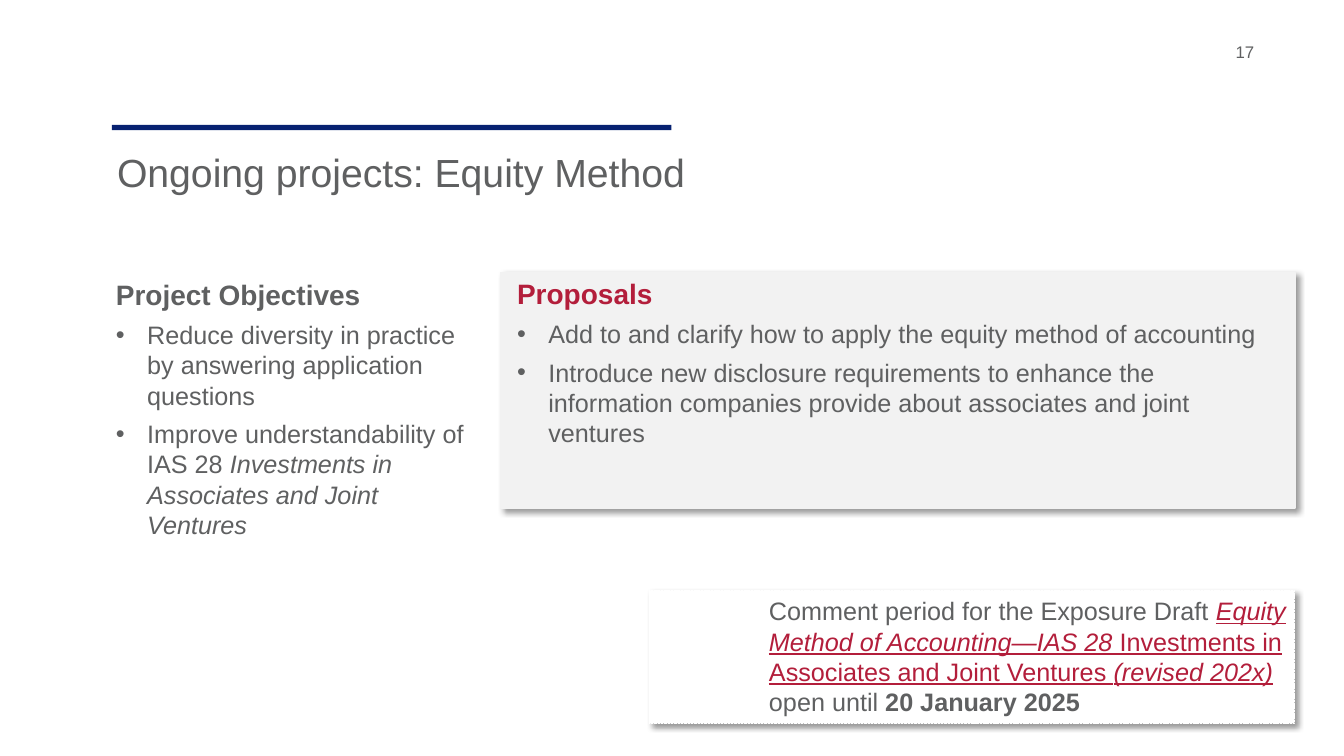
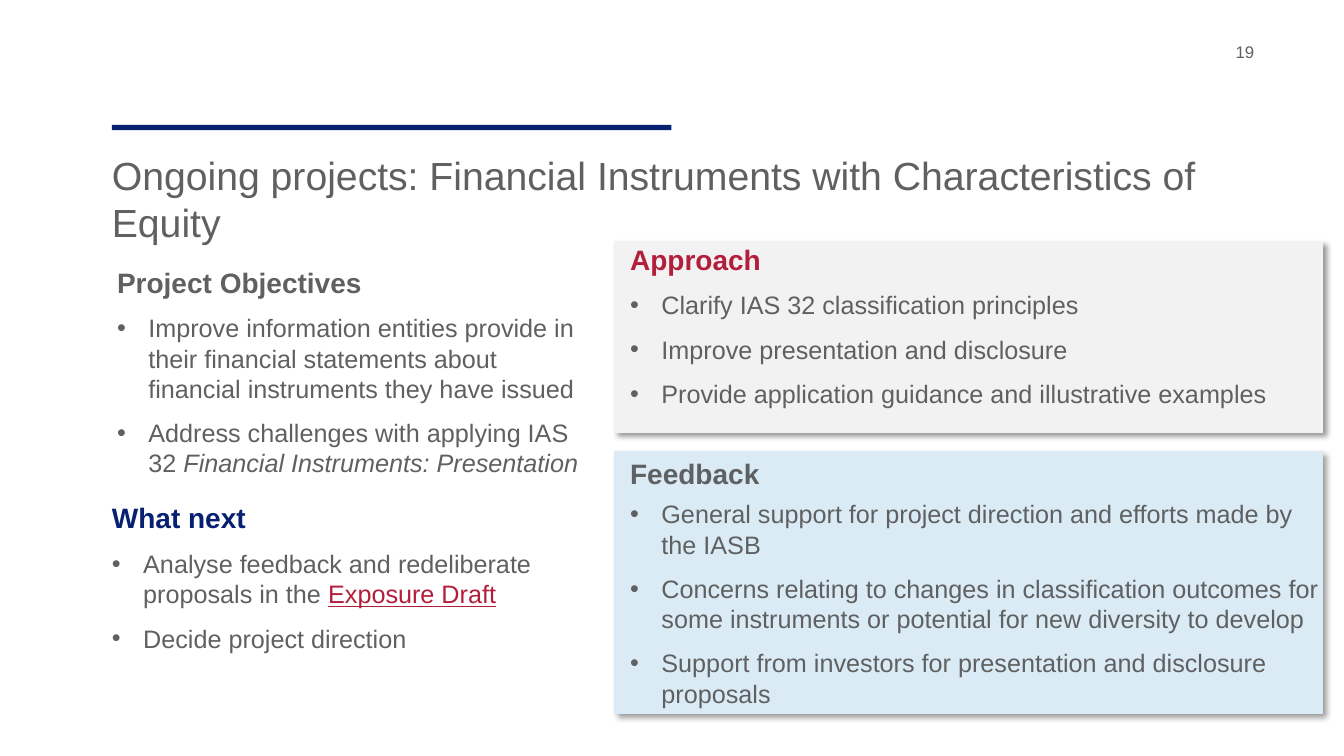
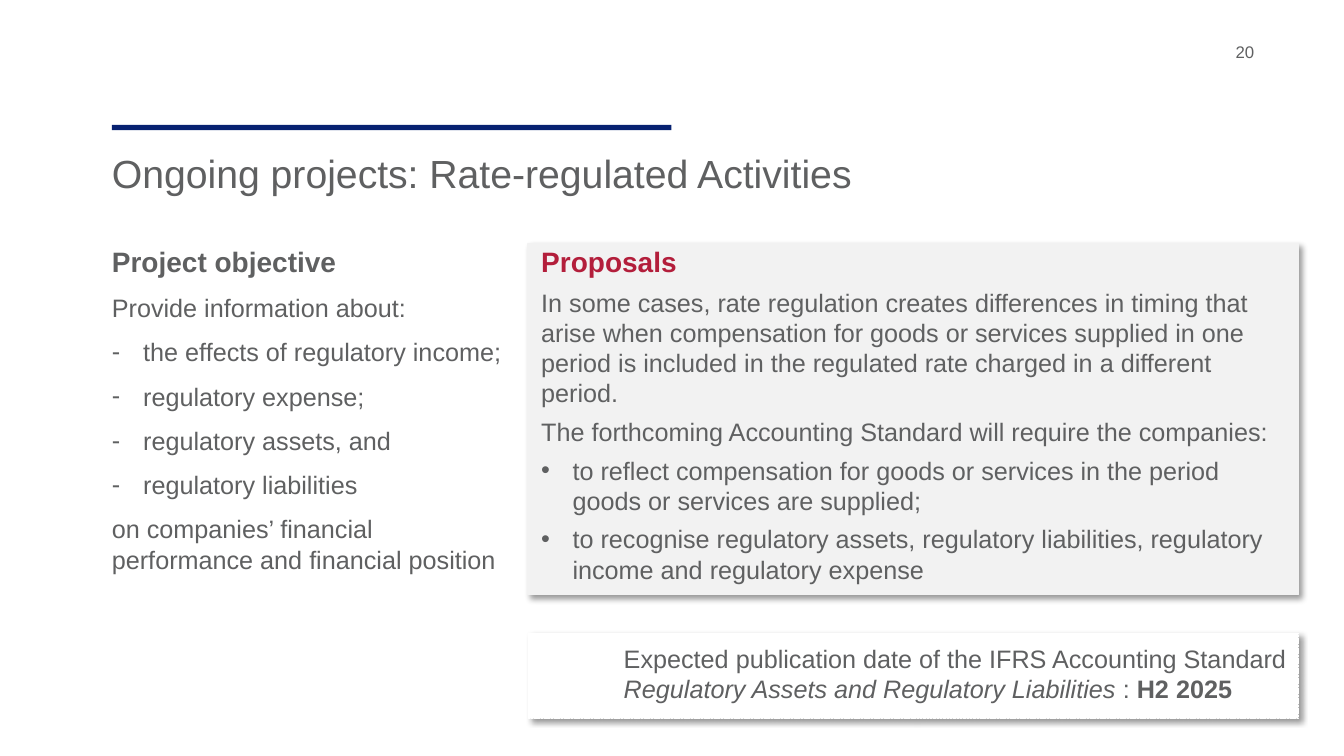
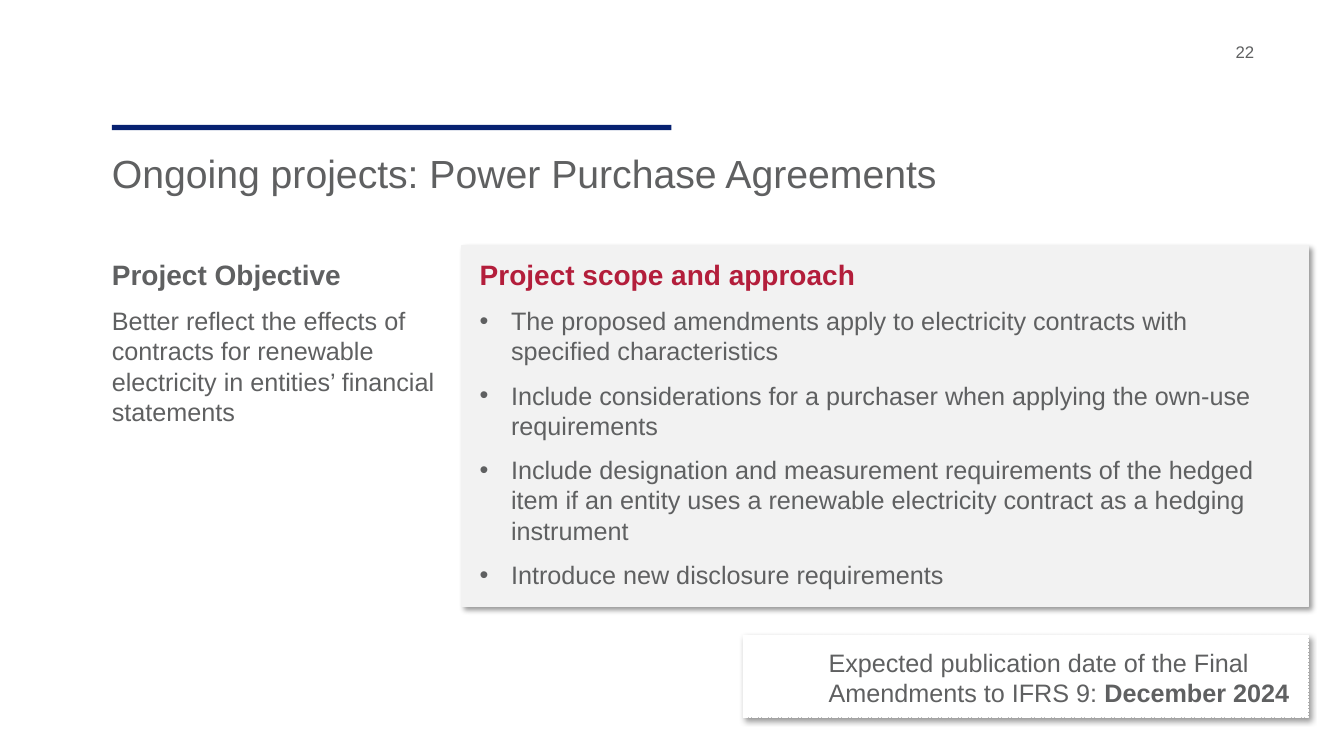
from lxml.etree import SubElement
from pptx import Presentation
from pptx.dml.color import RGBColor
from pptx.enum.dml import MSO_LINE
from pptx.enum.shapes import MSO_SHAPE
from pptx.oxml.ns import qn
from pptx.util import Cm, Pt

COLORS = {
    "bar": "072171",
    "navy": "072071",
    "text": "5F6061",
    "red": "B31E3B",
    "grey": "F2F2F2",
    "blue": "DAEBF5",
    "white": "FFFFFF",
}
FONT = "Arial"
INDENT = Cm(0.79)


def add_panel(slide, box, color):
    panel = slide.shapes.add_shape(MSO_SHAPE.RECTANGLE, *map(Cm, box))
    panel.shadow.inherit = False
    panel.fill.solid()
    panel.fill.fore_color.rgb = RGBColor.from_string(COLORS[color])
    panel.line.color.rgb = RGBColor.from_string(COLORS[color])
    panel.line.width = Pt(1)
    if color == "bar":
        panel.line.fill.background()
        return
    if color == "white":
        panel.line.width = Pt(0.25)
        panel.line.dash_style = MSO_LINE.SQUARE_DOT
    effects = panel._element.spPr.find(qn("a:effectLst"))
    shadow = SubElement(effects, qn("a:outerShdw"), blurRad=str(Pt(4)), dist=str(Pt(3)),
                        dir="2700000", algn="tl", rotWithShape="0")
    black = SubElement(shadow, qn("a:srgbClr"), val="000000")
    SubElement(black, qn("a:alpha"), val="40000")


def add_text(slide, box, paragraphs, size=18, heading=None, heading_color="text", gaps=(10, 10)):
    frame = slide.shapes.add_textbox(*map(Cm, box)).text_frame
    frame.word_wrap = True
    frame.margin_left = frame.margin_right = frame.margin_top = frame.margin_bottom = 0
    rows = [("", (heading, "h"))] if heading else []
    rows += paragraphs
    for index, (bullet, *runs) in enumerate(rows):
        paragraph = frame.paragraphs[0] if index == 0 else frame.add_paragraph()
        if index:
            paragraph.space_before = Pt(gaps[0] if index == 1 else gaps[1])
        if bullet:
            properties = paragraph._p.get_or_add_pPr()
            properties.set("marL", str(INDENT))
            properties.set("indent", str(-INDENT))
            SubElement(properties, qn("a:buFont"), typeface=FONT)
            SubElement(properties, qn("a:buChar"), char=bullet)
        for words, style in runs:
            run = paragraph.add_run()
            run.text = words
            run.font.name = FONT
            run.font.size = Pt(20 if style == "h" else size)
            run.font.bold = style in ("h", "b")
            run.font.italic = "i" in style
            run.font.underline = "u" in style
            color = heading_color if style == "h" else "red" if "u" in style else "text"
            run.font.color.rgb = RGBColor.from_string(COLORS[color])


pages = [
    {
        "number": "17",
        "title": "Ongoing projects: Equity Method",
        "title_box": (2.95, 3.73, 28.3, 1.83),
        "panels": [((12.62, 6.86, 20.02, 5.94), "grey"), ((16.36, 14.88, 16.26, 3.35), "white")],
        "blocks": [
            {"box": (2.92, 6.99, 9.27, 5.1), "heading": "Project Objectives", "gaps": (6, 6),
             "paragraphs": [
                 ("•", ("Reduce diversity in practice by answering application questions", "")),
                 ("•", ("Improve understandability of IAS 28 ", ""),
                  ("Investments in Associates and Joint Ventures", "i")),
             ]},
            {"box": (13.03, 6.96, 18.92, 4.98), "heading": "Proposals", "heading_color": "red",
             "gaps": (6, 6),
             "paragraphs": [
                 ("•", ("Add to and clarify how to apply the equity method of accounting", "")),
                 ("•", ("Introduce new disclosure requirements to enhance the information companies "
                        "provide about associates and joint ventures", "")),
             ]},
            {"box": (19.38, 15.01, 13.26, 2.69),
             "paragraphs": [
                 ("", ("Comment period for the Exposure Draft ", ""),
                  ("Equity Method of Accounting—IAS 28 ", "iu"),
                  ("Investments in Associates and Joint Ventures ", "u"),
                  ("(revised 202x) ", "iu"),
                  ("open until ", ""),
                  ("20 January 2025", "b")),
             ]},
        ],
    },
    {
        "number": "19",
        "title": "Ongoing projects: Financial Instruments with Characteristics of Equity",
        "title_box": (2.82, 3.81, 28.3, 1.83),
        "panels": [((15.49, 11.38, 17.83, 6.6), "blue"), ((15.49, 6.1, 17.83, 4.8), "grey")],
        "blocks": [
            {"box": (2.95, 6.68, 11.96, 5.7), "heading": "Project Objectives",
             "paragraphs": [
                 ("•", ("Improve information entities provide in their financial statements about "
                        "financial instruments they have issued", "")),
                 ("•", ("Address challenges with applying IAS 32 ", ""),
                  ("Financial Instruments: Presentation", "i")),
             ]},
            {"box": (2.82, 12.62, 11.96, 4.22), "heading": "What next", "heading_color": "navy",
             "paragraphs": [
                 ("•", ("Analyse feedback and redeliberate proposals in the ", ""),
                  ("Exposure Draft", "u")),
                 ("•", ("Decide project direction", "")),
             ]},
            {"box": (15.88, 6.1, 16.15, 4.8), "heading": "Approach", "heading_color": "red",
             "paragraphs": [
                 ("•", ("Clarify IAS 32 classification principles", "")),
                 ("•", ("Improve presentation and disclosure", "")),
                 ("•", ("Provide application guidance and illustrative examples", "")),
             ]},
            {"box": (15.88, 11.51, 17.45, 6.27), "heading": "Feedback", "gaps": (6, 10),
             "paragraphs": [
                 ("•", ("General support for project direction and efforts made by the IASB", "")),
                 ("•", ("Concerns relating to changes in classification outcomes for some "
                        "instruments or potential for new diversity to develop", "")),
                 ("•", ("Support from investors for presentation and disclosure proposals", "")),
             ]},
        ],
    },
    {
        "number": "20",
        "title": "Ongoing projects: Rate-regulated Activities",
        "title_box": (2.82, 3.76, 28.3, 1.83),
        "panels": [((13.31, 15.95, 19.41, 2.16), "white"), ((13.31, 6.15, 19.41, 8.84), "grey")],
        "blocks": [
            {"box": (2.82, 6.17, 10.08, 9.73), "heading": "Project objective",
             "paragraphs": [
                 ("", ("Provide information about:", "")),
                 ("-", ("the effects of regulatory income;", "")),
                 ("-", ("regulatory expense;", "")),
                 ("-", ("regulatory assets, and", "")),
                 ("-", ("regulatory liabilities", "")),
                 ("", ("on companies’ financial performance and financial position", "")),
             ]},
            {"box": (13.64, 6.17, 18.77, 7.95), "heading": "Proposals", "heading_color": "red",
             "gaps": (6, 6),
             "paragraphs": [
                 ("", ("In some cases, rate regulation creates differences in timing that arise "
                       "when compensation for goods or services supplied in one period is included "
                       "in the regulated rate charged in a different period.", "")),
                 ("", ("The forthcoming Accounting Standard will require the companies:", "")),
                 ("•", ("to reflect compensation for goods or services in the period goods or "
                        "services are supplied;", "")),
                 ("•", ("to recognise regulatory assets, regulatory liabilities, regulatory income "
                        "and regulatory expense", "")),
             ]},
            {"box": (15.72, 16.21, 17.15, 1.55),
             "paragraphs": [
                 ("", ("Expected publication date of the IFRS Accounting Standard ", ""),
                  ("Regulatory Assets and Regulatory Liabilities ", "i"),
                  (": ", ""),
                  ("H2 2025", "b")),
             ]},
        ],
    },
    {
        "number": "22",
        "title": "Ongoing projects: Power Purchase Agreements",
        "title_box": (2.82, 3.76, 30, 1.83),
        "panels": [((18.72, 16, 14.25, 2.08), "white"), ((11.63, 6.2, 21.34, 9.09), "grey")],
        "blocks": [
            {"box": (2.82, 6.5, 8.28, 9.73), "heading": "Project Objective",
             "paragraphs": [
                 ("", ("Better reflect the effects of contracts for renewable electricity in "
                       "entities’ financial statements", "")),
             ]},
            {"box": (12.09, 6.5, 20.14, 8.13), "heading": "Project scope and approach",
             "heading_color": "red",
             "paragraphs": [
                 ("•", ("The proposed amendments apply to electricity contracts with specified "
                        "characteristics", "")),
                 ("•", ("Include considerations for a purchaser when applying the own-use "
                        "requirements", "")),
                 ("•", ("Include designation and measurement requirements of the hedged item if an "
                        "entity uses a renewable electricity contract as a hedging instrument", "")),
                 ("•", ("Introduce new disclosure requirements", "")),
             ]},
            {"box": (20.88, 16.31, 12.42, 1.55),
             "paragraphs": [
                 ("", ("Expected publication date of the Final Amendments to IFRS 9: ", ""),
                  ("December 2024", "b")),
             ]},
        ],
    },
]

deck = Presentation()
deck.slide_width = Cm(33.87)
deck.slide_height = Cm(19.05)

for page in pages:
    slide = deck.slides.add_slide(deck.slide_layouts[6])
    add_panel(slide, (2.82, 3.15, 14.1, 0.13), "bar")
    for box, color in page["panels"]:
        add_panel(slide, box, color)
    add_text(slide, page["title_box"], [("", (page["title"], ""))], size=28)
    add_text(slide, (31.14, 1.04, 1.7, 0.74), [("", (page["number"], ""))], size=12)
    for block in page["blocks"]:
        add_text(slide, **block)

deck.save("out.pptx")
